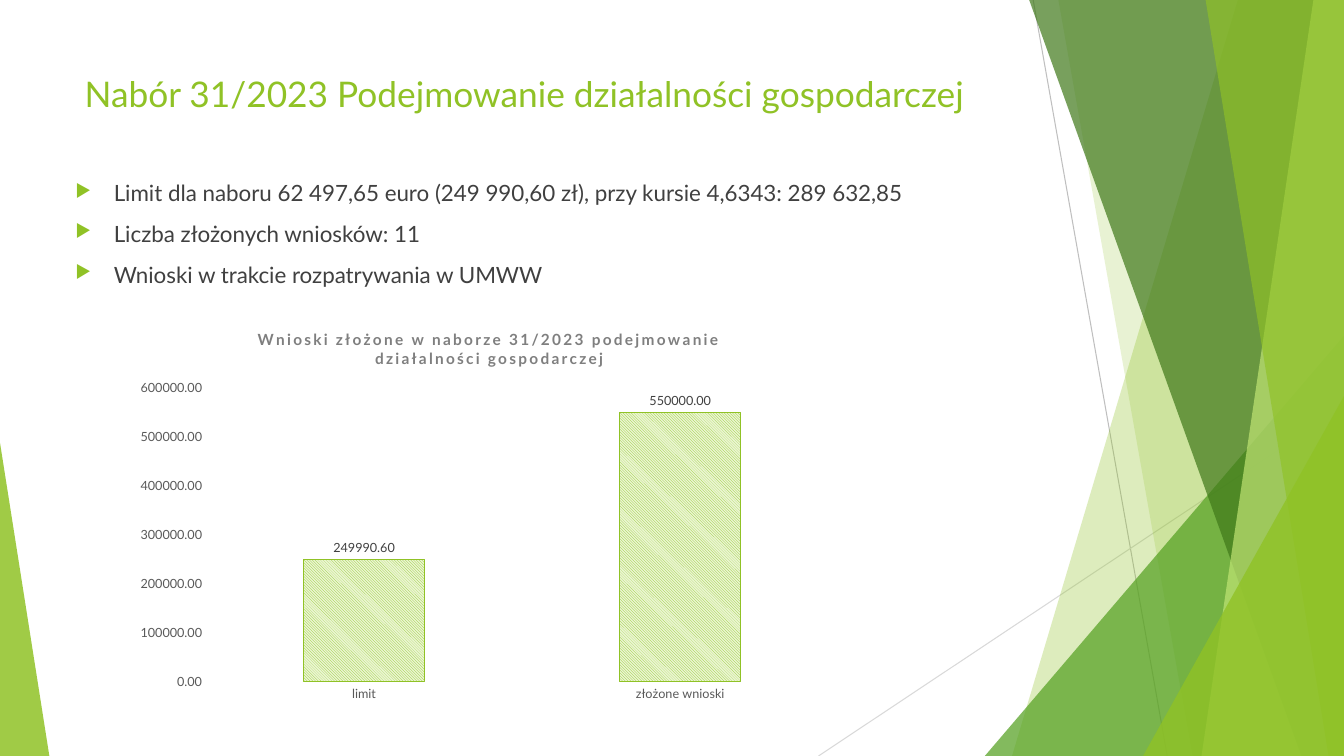
from lxml import etree
from pptx import Presentation
from pptx.chart.data import CategoryChartData
from pptx.dml.color import RGBColor
from pptx.enum.chart import XL_CHART_TYPE, XL_LABEL_POSITION, XL_TICK_MARK
from pptx.enum.dml import MSO_PATTERN
from pptx.enum.shapes import MSO_CONNECTOR, MSO_SHAPE
from pptx.enum.text import MSO_ANCHOR, MSO_AUTO_SIZE, PP_ALIGN
from pptx.oxml.ns import qn
from pptx.util import Inches, Pt

COLUMN = XL_CHART_TYPE.COLUMN_CLUSTERED
OUTSIDE = XL_LABEL_POSITION.OUTSIDE_END
NO_TICK = XL_TICK_MARK.NONE
HATCH = MSO_PATTERN.LIGHT_DOWNWARD_DIAGONAL
STRAIGHT = MSO_CONNECTOR.STRAIGHT
TRIANGLE = MSO_SHAPE.ISOSCELES_TRIANGLE
TOP = MSO_ANCHOR.TOP
NO_FIT = MSO_AUTO_SIZE.NONE
LEFT = PP_ALIGN.LEFT

LIME = RGBColor(0x90, 0xC2, 0x26)
GREEN = RGBColor(0x54, 0xA0, 0x21)
FOREST = RGBColor(0x3F, 0x78, 0x19)
PALE_LIME = RGBColor(0xC0, 0xE4, 0x74)
MIST = RGBColor(0xEA, 0xF6, 0xD1)
TEXT = RGBColor(0x40, 0x40, 0x40)
AXIS_TEXT = RGBColor(0x59, 0x59, 0x59)
CHART_TITLE = RGBColor(0x7F, 0x7F, 0x7F)
GRAY = RGBColor(0xBF, 0xBF, 0xBF)
LIGHT_GRAY = RGBColor(0xD9, 0xD9, 0xD9)
FONT = "Lato"

prs = Presentation()
prs.slide_width, prs.slide_height = Inches(13.33), Inches(7.5)
COLS, ROWS = 40, 30
COL, ROW = prs.slide_width / COLS, prs.slide_height / ROWS


def grid(*cells):
    return [int(n * (ROW if i % 2 else COL)) for i, n in enumerate(cells)]


def style(font, **values):
    font.name = FONT
    color = values.pop("color")
    for name, value in values.items():
        setattr(font, name, value)
    font.color.rgb = color


s = prs.slides.add_slide(prs.slide_layouts[5])

for ends, color in [
    ((30.75, 0, 34.74, ROWS), GRAY),
    ((COLS, 16.12, 24.36, ROWS), LIGHT_GRAY),
]:
    line = s.shapes.add_connector(STRAIGHT, *grid(*ends))
    line.line.color.rgb = color
    line.line.width = Pt(0.75)
    etree.SubElement(line._element.spPr, qn("a:effectLst"))

# panes: (top column, bottom column); triangles: (left, top, width, apex)
facets = [
    ((36.84, 30.12), LIME, 30),
    ((31.5, 35.49), LIME, 20),
    ((29.31, 13.32, 10.69, 1), GREEN, 72),
    ((30.63, 38.73), FOREST, 70),
    ((39.09, 35.76), PALE_LIME, 70),
    ((35.88, 39.54), LIME, 65),
    ((34.02, 15.72, 5.98, 1), LIME, 80),
    ((0, 17.56, 1.47, 0), LIME, 85),
]
for outline, color, opacity in facets:
    if len(outline) == 2:
        top, bottom = outline
        pane = s.shapes.build_freeform(*grid(top, 0))
        corners = [(COLS, 0), (COLS, ROWS), (bottom, ROWS)]
        pane.add_line_segments([grid(*c) for c in corners], close=True)
        sp = pane.convert_to_shape()
    else:
        left, top, width, apex = outline
        sp = s.shapes.add_shape(TRIANGLE, *grid(left, top, width, ROWS - top))
        sp.adjustments[0] = apex
    sp.shadow.inherit = False
    sp.fill.solid()
    sp.fill.fore_color.rgb = color
    sp.line.fill.background()
    clr = sp._element.spPr.find(qn("a:solidFill"))[0]
    etree.SubElement(clr, qn("a:alpha"), val=str(opacity * 1000))

title = s.shapes.title
title.left, title.top, title.width, title.height = grid(2.22, 2.68, 28.32, 2.8)
title.text = "Nabór 31/2023 Podejmowanie działalności gospodarczej"
body = s.shapes.add_textbox(*grid(1.95, 6.92, 29.22, 21.24))
for sp in (title, body):
    for name, value in {"word_wrap": True, "auto_size": NO_FIT, "vertical_anchor": TOP}.items():
        setattr(sp.text_frame, name, value)
p = title.text_frame.paragraphs[0]
p.alignment = LEFT
style(p.runs[0].font, size=Pt(25.2), color=LIME)

tf = body.text_frame
for i, text in enumerate([
    "Limit dla naboru 62 497,65 euro (249 990,60 zł), przy kursie 4,6343: 289 632,85",
    "Liczba złożonych wniosków: 11",
    "Wnioski w trakcie rozpatrywania w UMWW",
]):
    p = tf.add_paragraph() if i else tf.paragraphs[0]
    p.space_before = Pt(10)
    r = p.add_run()
    r.text = text
    style(r.font, size=Pt(16), color=TEXT)
    pPr = p._p.get_or_add_pPr()
    pPr.set("marL", str(Inches(0.38)))
    pPr.set("indent", str(-Inches(0.38)))
    bullet_color = etree.SubElement(pPr, qn("a:buClr"))
    etree.SubElement(bullet_color, qn("a:srgbClr"), val=str(LIME))
    etree.SubElement(pPr, qn("a:buSzPct"), val="80000")
    etree.SubElement(pPr, qn("a:buChar"), char="▶")

data = CategoryChartData(number_format="0.00")
data.categories = ["limit", "złożone wnioski"]
data.add_series("Series 1", [249990.6, 550000])
chart = s.shapes.add_chart(COLUMN, *grid(3.75, 12.36, 21.63, 15.8), data).chart
chart.has_legend = False
style(chart.font, size=Pt(10), color=TEXT)

chart.has_title = True
chart.chart_title.include_in_layout = False
r = chart.chart_title.text_frame.paragraphs[0].add_run()
r.text = "Wnioski złożone w naborze 31/2023 podejmowanie działalności gospodarczej"
style(r.font, size=Pt(11), bold=True, color=CHART_TITLE)
r.font._element.set("spc", "150")

for axis in (chart.category_axis, chart.value_axis):
    axis.has_major_gridlines = False
    axis.major_tick_mark = axis.minor_tick_mark = NO_TICK
    axis.format.line.fill.background()
    style(axis.tick_labels.font, size=Pt(9), color=AXIS_TEXT)
labels = chart.value_axis.tick_labels
labels.number_format, labels.number_format_is_linked = "0.00", False

plot = chart.plots[0]
plot.gap_width = 160
plot.vary_by_categories = False
bars = plot.series[0]
fill = bars.format.fill
fill.patterned()
fill.pattern = HATCH
fill.fore_color.rgb, fill.back_color.rgb = LIME, MIST
bars.format.line.color.rgb = LIME
bars.format.line.width = Pt(0.75)
labels = bars.data_labels
for name, value in {
    "show_value": True,
    "position": OUTSIDE,
    "number_format": "0.00",
    "number_format_is_linked": False,
}.items():
    setattr(labels, name, value)
style(labels.font, size=Pt(9), color=TEXT)

prs.save("out.pptx")
